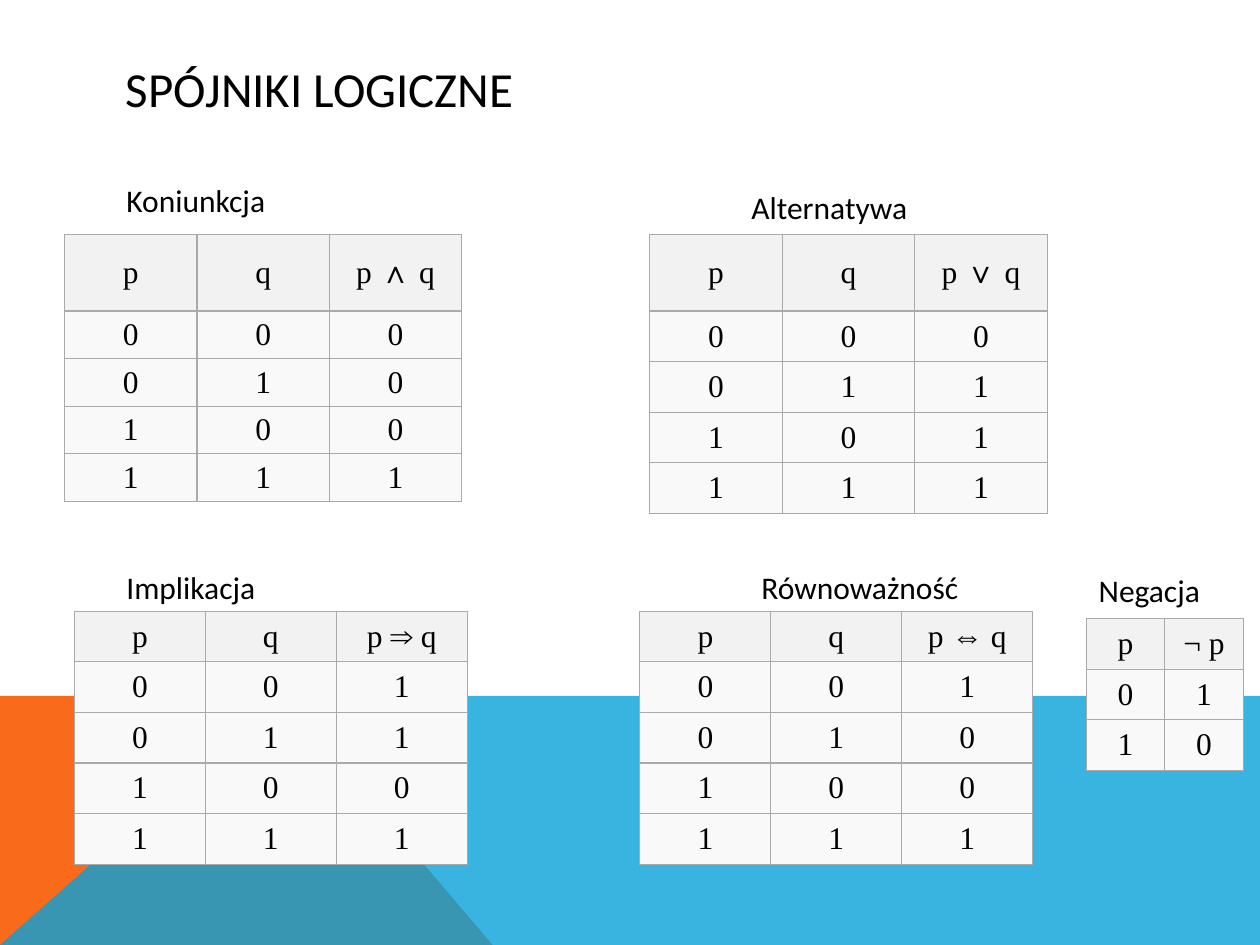
from itertools import product

from lxml.etree import SubElement
from pptx import Presentation
from pptx.dml.color import RGBColor
from pptx.enum.text import MSO_ANCHOR as Anchor, PP_ALIGN as Align
from pptx.oxml.ns import qn
from pptx.util import Cm, Pt

COLORS = {
    "text": "000000",
    "orange": "F96A1B",
    "blue": "08A1D9",
    "header": "F2F2F2",
    "body": "F9F9F9",
    "border": "AAAAAA",
}
WIDTH, HEIGHT = 25.4, 19.05
HORIZON = 14.03
ROW = 1.02


class LogicSlide:
    heading_font = "Calibri"
    table_font = "Times New Roman"
    body_size = 18

    def __init__(self, prs):
        self.slide = prs.slides.add_slide(prs.slide_layouts[6])
        self.shapes = self.slide.shapes

    @staticmethod
    def color(name):
        return RGBColor.from_string(COLORS[name])

    def format_text(self, paragraph, font_name, size):
        for run in paragraph.runs:
            run.font.name = font_name
            run.font.size = Pt(size)
            run.font.bold = False
            run.font.color.rgb = self.color("text")

    def polygon(self, points, fill, alpha=100):
        start, *others = [(Cm(x), Cm(y)) for x, y in points]
        builder = self.shapes.build_freeform(*start)
        builder.add_line_segments(others, close=True)
        area = builder.convert_to_shape()
        area.shadow.inherit = False
        area.line.fill.background()
        area.fill.solid()
        area.fill.fore_color.rgb = self.color(fill)
        if alpha < 100:
            tint = area.fill._xPr.find(".//" + qn("a:srgbClr"))
            SubElement(tint, qn("a:alpha"), val=str(alpha * 1000))

    def heading(self, words, left, top, width=5.0, height=1.02, size=body_size):
        frame = self.shapes.add_textbox(Cm(left), Cm(top), Cm(width), Cm(height)).text_frame
        frame.word_wrap = True
        frame.vertical_anchor = Anchor.MIDDLE
        frame.text = words
        self.format_text(frame.paragraphs[0], self.heading_font, size)

    def cell(self, cell, words, fill):
        cell.text_frame.text = words
        cell.vertical_anchor = Anchor.MIDDLE
        cell.margin_top = cell.margin_bottom = Cm(0.05)
        paragraph = cell.text_frame.paragraphs[0]
        paragraph.alignment = Align.CENTER
        self.format_text(paragraph, self.table_font, self.body_size)
        properties = cell._tc.get_or_add_tcPr()
        for side in ("lnL", "lnR", "lnT", "lnB"):
            border = SubElement(properties, qn("a:" + side), w=str(Pt(0.75)))
            paint = SubElement(border, qn("a:solidFill"))
            SubElement(paint, qn("a:srgbClr"), val=COLORS["border"])
        cell.fill.solid()
        cell.fill.fore_color.rgb = self.color(fill)

    def truth_table(self, variables, formula, connective, left, top, column,
                    header=ROW, row=ROW):
        """List every valuation of the variables with the connective's value."""
        valuations = product((0, 1), repeat=len(variables))
        lines = [[*variables, formula]]
        lines += [[*map(str, values), str(int(connective(*values)))] for values in valuations]
        heights = [header] + [row] * (len(lines) - 1)
        columns = len(lines[0])
        table = self.shapes.add_table(
            len(lines), columns, Cm(left), Cm(top), Cm(column * columns), Cm(sum(heights))
        ).table
        table.horz_banding = False
        for table_column in table.columns:
            table_column.width = Cm(column)
        for index, (line, height) in enumerate(zip(lines, heights)):
            table.rows[index].height = Cm(height)
            for position, words in enumerate(line):
                self.cell(table.cell(index, position), words, "body" if index else "header")


def main():
    prs = Presentation()
    prs.slide_width, prs.slide_height = Cm(WIDTH), Cm(HEIGHT)
    page = LogicSlide(prs)

    page.polygon([(0, HEIGHT), (0, HORIZON), (5.66, HORIZON), (9.93, HEIGHT)], "orange")
    page.polygon([(0, HEIGHT), (5.66, HORIZON), (WIDTH, HORIZON), (WIDTH, HEIGHT)],
                 "blue", alpha=80)
    page.heading("SPÓJNIKI LOGICZNE", 2.29, 1.02, width=20.88, height=1.52, size=28)

    page.truth_table("pq", "p ∧ q", lambda p, q: p and q, 1.3, 4.72, 2.67, header=1.55, row=0.96)
    page.truth_table("pq", "p ∨ q", lambda p, q: p or q, 13.1, 4.72, 2.67, header=1.55)
    page.truth_table("pq", "p ⇒ q", lambda p, q: p <= q, 1.5, 12.32, 2.64)
    page.truth_table("pq", "p ⇔ q", lambda p, q: p == q, 12.9, 12.32, 2.64)
    page.truth_table("p", "¬ p", lambda p: not p, 21.9, 12.47, 1.58)

    page.heading("Koniunkcja", 2.3, 3.53)
    page.heading("Alternatywa", 14.9, 3.66)
    page.heading("Implikacja", 2.3, 11.33)
    page.heading("Równoważność", 15.1, 11.33)
    page.heading("Negacja", 21.9, 11.38, width=3.16)

    prs.save("out.pptx")


if __name__ == "__main__":
    main()
